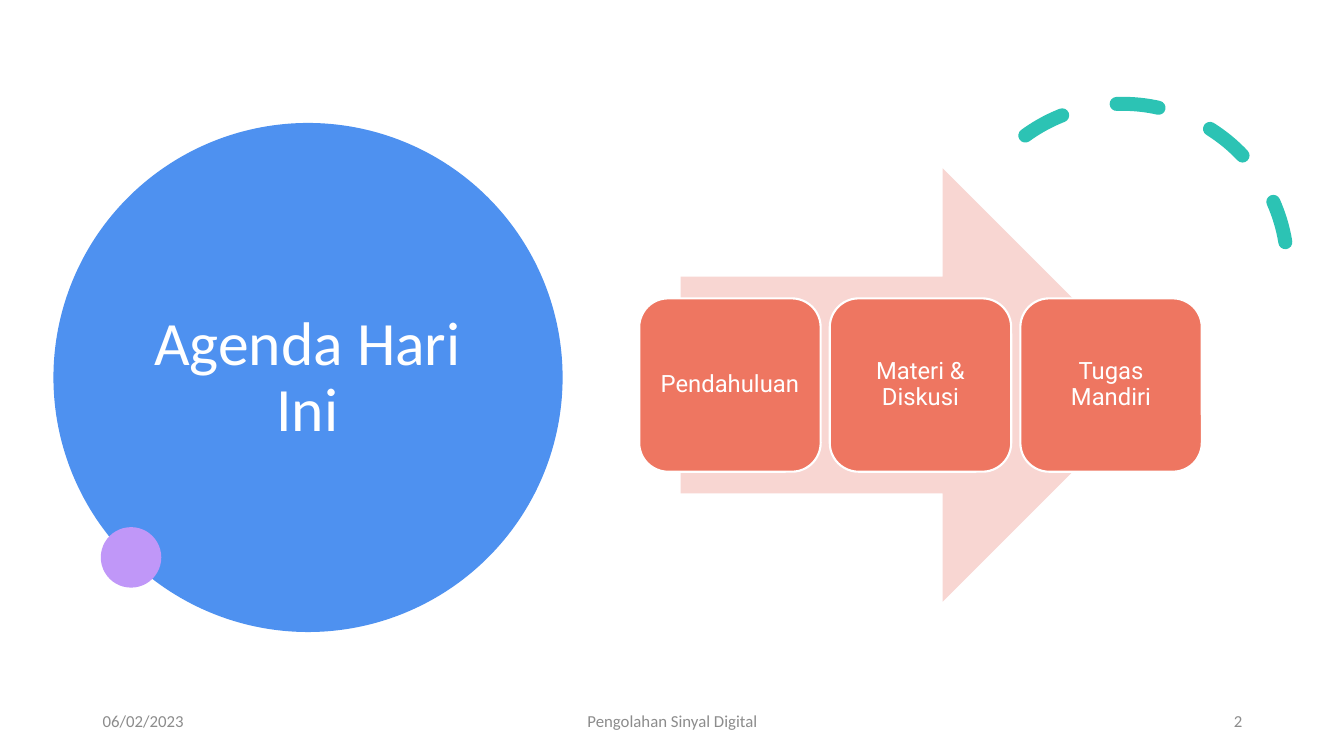
from dataclasses import dataclass
from lxml.etree import SubElement
from pptx import Presentation
from pptx.dml.color import RGBColor
from pptx.enum.dml import MSO_LINE
from pptx.enum.shapes import MSO_SHAPE
from pptx.enum.text import MSO_ANCHOR, MSO_AUTO_SIZE, PP_ALIGN
from pptx.oxml.ns import qn
from pptx.util import Inches, Pt

TITLE = "Agenda Hari Ini"
STEPS = ["Pendahuluan", "Materi & Diskusi", "Tugas Mandiri"]
FOOTERS = [
    ("06/02/2023", 0.92, 3, PP_ALIGN.LEFT),
    ("Pengolahan Sinyal Digital", 4.42, 4.5, PP_ALIGN.CENTER),
    ("2", 9.42, 3, PP_ALIGN.RIGHT),
]


@dataclass(frozen=True)
class Theme:
    blue: str = "4E91F0"
    teal: str = "2CC3B4"
    purple: str = "C097F8"
    pink: str = "F8D6D2"
    coral: str = "EE7661"
    white: str = "FFFFFF"
    grey: str = "8C8C8C"
    title_size: int = 44
    step_size: int = 17
    footer_size: int = 12
    font: str = "Calibri"
    step_font: str = "Roboto"


THEME = Theme()


def add_figure(page, kind, left, top, width, height, fill=None, line=None, weight=1.5):
    figure = page.shapes.add_shape(
        kind, Inches(left), Inches(top), Inches(width), Inches(height))
    figure.shadow.inherit = False
    if fill:
        figure.fill.solid()
        figure.fill.fore_color.rgb = RGBColor.from_string(fill)
    else:
        figure.fill.background()
    if line:
        figure.line.color.rgb = RGBColor.from_string(line)
        figure.line.width = Pt(weight)
    else:
        figure.line.fill.background()
    return figure


def write(box, text, size, color, font=THEME.font, align=PP_ALIGN.CENTER,
          spacing=1.0, inset=None):
    frame = box.text_frame
    frame.word_wrap = True
    frame.auto_size = MSO_AUTO_SIZE.NONE
    frame.vertical_anchor = MSO_ANCHOR.MIDDLE
    if inset is not None:
        frame.margin_left = frame.margin_right = Inches(inset)
        frame.margin_top = frame.margin_bottom = Inches(inset)
    para = frame.paragraphs[0]
    para.alignment = align
    para.line_spacing = spacing
    span = para.add_run()
    span.text = text
    span.font.size = Pt(size)
    span.font.name = font
    span.font.color.rgb = RGBColor.from_string(color)


def add_decoration(page):
    add_figure(page, MSO_SHAPE.OVAL, 0.53, 1.22, 5.05, 5.05, THEME.blue)
    arc = add_figure(page, MSO_SHAPE.ARC, 9.5, 1.03, 3.27, 3.27,
                     line=THEME.teal, weight=10)
    arc.adjustments[0] = 158.174
    arc.adjustments[1] = 17.814
    arc.rotation = 330.2
    arc.line.dash_style = MSO_LINE.DASH
    arc.line._get_or_add_ln().set("cap", "rnd")
    SubElement(arc.line._get_or_add_ln(), qn("a:round"))
    add_figure(page, MSO_SHAPE.OVAL, 1, 5.23, 0.6, 0.6, THEME.purple)


def add_title(page):
    title = page.shapes.title
    title.left, title.top = Inches(1.28), Inches(1.53)
    title.width, title.height = Inches(3.54), Inches(4.45)
    write(title, TITLE, THEME.title_size, THEME.white, spacing=0.9)
    title.element.getparent().append(title.element)


def add_steps(page):
    left, pitch = 6.34, 1.89
    add_figure(page, MSO_SHAPE.RIGHT_ARROW, 6.75, 1.67, 4.75, 4.3, THEME.pink)
    for index, step in enumerate(STEPS):
        card = add_figure(page, MSO_SHAPE.ROUNDED_RECTANGLE, left + index * pitch,
                          2.96, 1.8, 1.72, THEME.coral, THEME.white)
        write(card, step, THEME.step_size, THEME.white, THEME.step_font,
              spacing=0.9, inset=0.07)


def add_footers(page):
    for text, left, width, align in FOOTERS:
        box = page.shapes.add_textbox(
            Inches(left), Inches(6.95), Inches(width), Inches(0.4))
        write(box, text, THEME.footer_size, THEME.grey, align=align)


def main():
    """Build the agenda slide."""
    deck = Presentation()
    deck.slide_width, deck.slide_height = Inches(13.33), Inches(7.5)
    page = deck.slides.add_slide(deck.slide_layouts[5])
    add_decoration(page)
    add_title(page)
    add_steps(page)
    add_footers(page)
    deck.save("out.pptx")


if __name__ == "__main__":
    main()
